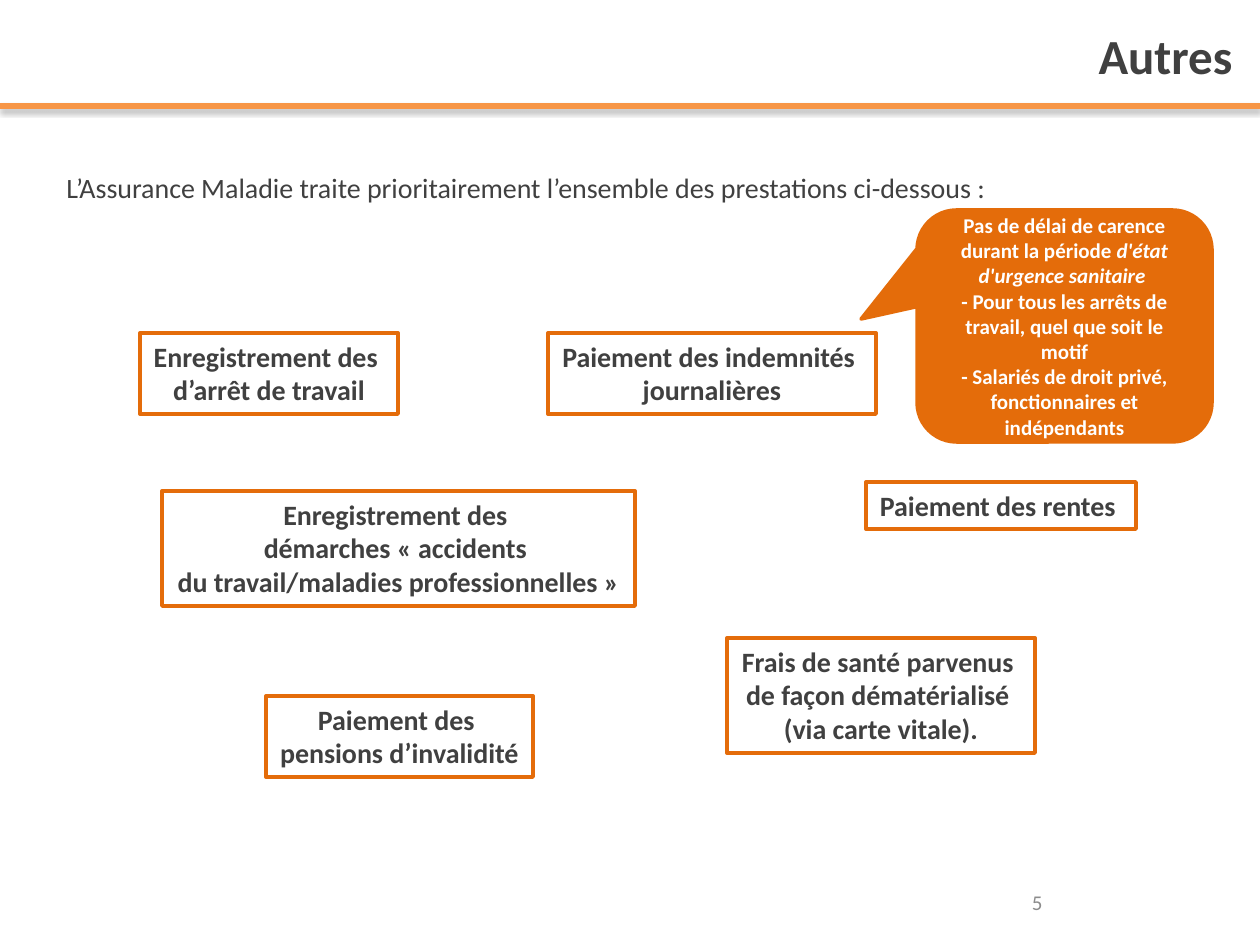
import pptx
import pptx.util
import pptx.dml.color
import pptx.enum.shapes
import pptx.enum.text
import pptx.oxml
import pptx.oxml.ns

RGB = pptx.dml.color.RGBColor.from_string
KIND = pptx.enum.shapes.MSO_SHAPE
ANCHOR = pptx.enum.text.MSO_ANCHOR
ALIGN = pptx.enum.text.PP_ALIGN
AUTO = pptx.enum.text.MSO_AUTO_SIZE
THEME = {
    "font": "Calibri",
    "ink": "404040", "grey": "8C8C8C", "white": "FFFFFF",
    "rule": "F79646", "accent": "E46C0A",
    "title": 28, "body": 16, "small": 12,
}


def px(*marks):
    return [round(mark * 914400 / 126) for mark in marks]


def write(shape, paras, size, color, align, bold=False, **frame):
    text = shape.text_frame
    for key, value in frame.items():
        setattr(text, key, value)
    for index, runs in enumerate(paras):
        para = text.add_paragraph() if index else text.paragraphs[0]
        para.alignment = align
        for words, slant in runs:
            run = para.add_run()
            run.text = words
            look = {"name": THEME["font"], "size": pptx.util.Pt(THEME[size]),
                    "bold": bold, "italic": slant}
            for key, value in look.items():
                setattr(run.font, key, value)
            run.font.color.rgb = RGB(THEME[color])


deck = pptx.Presentation()
deck.slide_width, deck.slide_height = px(1260, 945)
slide = deck.slides.add_slide(deck.slide_layouts[5])
shapes = slide.shapes

rule = shapes.add_connector(pptx.enum.shapes.MSO_CONNECTOR.STRAIGHT, *px(0, 106, 1260, 106))
rule.line.color.rgb = RGB(THEME["rule"])
rule.line.width = pptx.util.Pt(3)
rule._element.spPr.append(pptx.oxml.parse_xml(
    f'<a:effectLst {pptx.oxml.ns.nsdecls("a")}>'
    '<a:outerShdw blurRad="39370" dist="22860" dir="5400000" rotWithShape="0">'
    '<a:srgbClr val="000000"><a:alpha val="35000"/></a:srgbClr>'
    '</a:outerShdw></a:effectLst>'))

title = shapes.title
title.left, title.top, title.width, title.height = px(111, 6, 1134, 97)
write(title, [[("Autres", False)]], "title", "ink", ALIGN.RIGHT, True,
      vertical_anchor=ANCHOR.MIDDLE, auto_size=AUTO.NONE, word_wrap=True)

lead = shapes.add_textbox(*px(54, 164, 1181, 47))
write(lead, [[("L’Assurance Maladie traite prioritairement l’ensemble des prestations ci-dessous :", False)]],
      "body", "ink", ALIGN.LEFT, word_wrap=True, auto_size=AUTO.SHAPE_TO_FIT_TEXT)

number = shapes.add_textbox(*px(920, 877, 135, 50))
write(number, [[("5", False)]], "small", "grey", ALIGN.RIGHT,
      word_wrap=True, vertical_anchor=ANCHOR.MIDDLE)

tasks = [
    (140, 333, 258, ["Enregistrement des ", "d’arrêt de travail"]),
    (548, 333, 328, ["Paiement des indemnités ", "journalières"]),
    (866, 482, 270, ["Paiement des rentes "]),
    (266, 696, 267, ["Paiement des ", "pensions d’invalidité"]),
    (727, 638, 308, ["Frais de santé parvenus ", "de façon dématérialisé ", "(via carte vitale)."]),
    (162, 491, 473, ["Enregistrement des ", "démarches « accidents ",
                     "du travail/maladies professionnelles »"]),
]
for left, top, width, lines in tasks:
    box = shapes.add_shape(KIND.RECTANGLE, *px(left, top, width, 13 + 34 * len(lines)))
    box.shadow.inherit = False
    box.fill.background()
    box.line.color.rgb = RGB(THEME["accent"])
    box.line.width = pptx.util.Pt(2.25)
    write(box, [[(line, False)] for line in lines], "body", "ink", ALIGN.CENTER, True,
          word_wrap=False, auto_size=AUTO.SHAPE_TO_FIT_TEXT, vertical_anchor=ANCHOR.TOP)

note = shapes.add_shape(KIND.ROUNDED_RECTANGULAR_CALLOUT, *px(917, 210, 295, 232))
for index, value in enumerate([-0.69, -0.03, 0.17]):
    note.adjustments[index] = value
note.shadow.inherit = False
note.fill.solid()
note.fill.fore_color.rgb = RGB(THEME["accent"])
note.line.color.rgb = RGB(THEME["accent"])
note.line.width = pptx.util.Pt(2)
write(note, [
    [("Pas de délai de carence durant la période ", False), ("d'état d'urgence sanitaire ", True)],
    [("- Pour tous les arrêts de travail, quel que soit le motif", False)],
    [("- Salariés de droit privé, fonctionnaires et indépendants", False)],
], "small", "white", ALIGN.CENTER, True, word_wrap=True, vertical_anchor=ANCHOR.MIDDLE)

deck.save("out.pptx")
